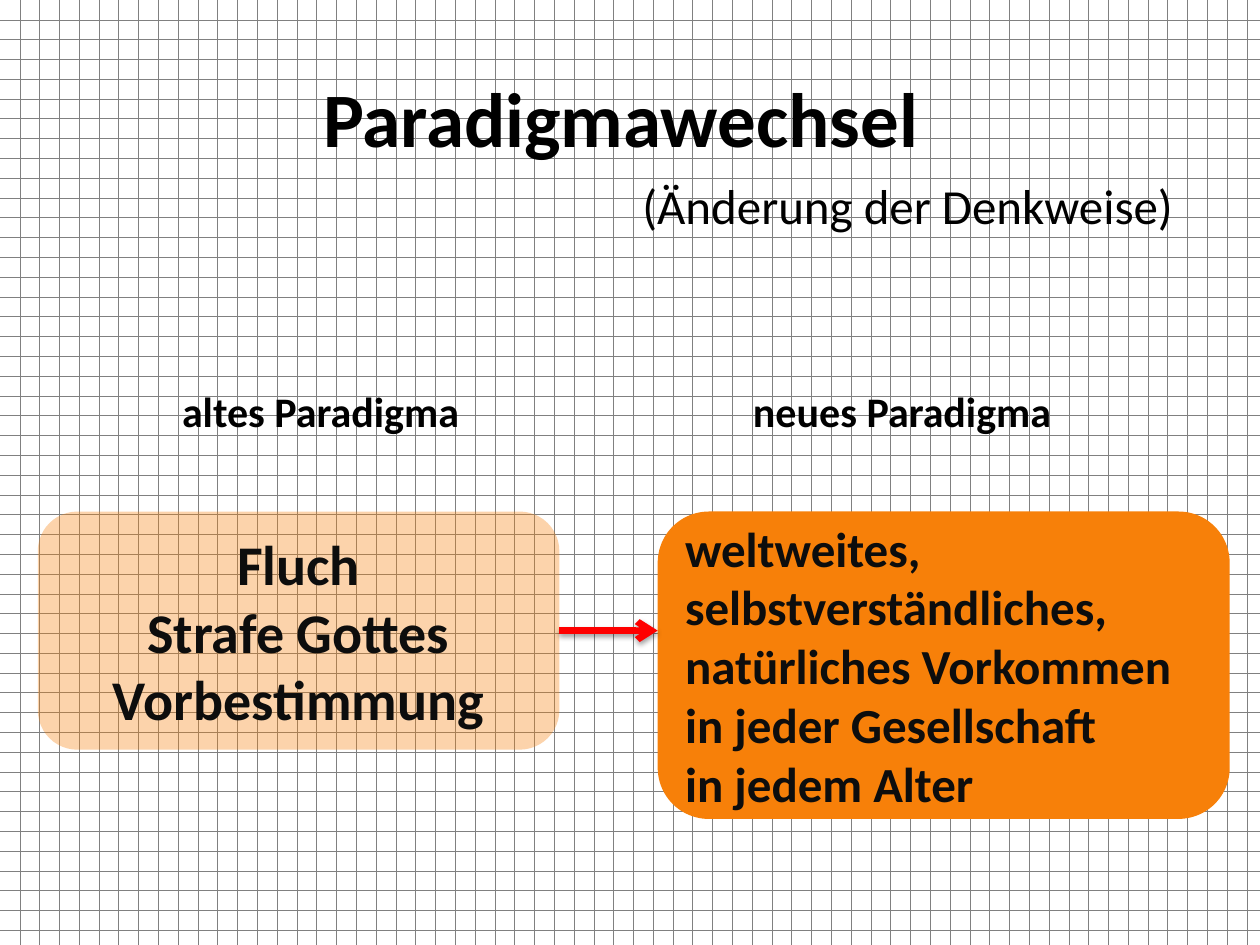
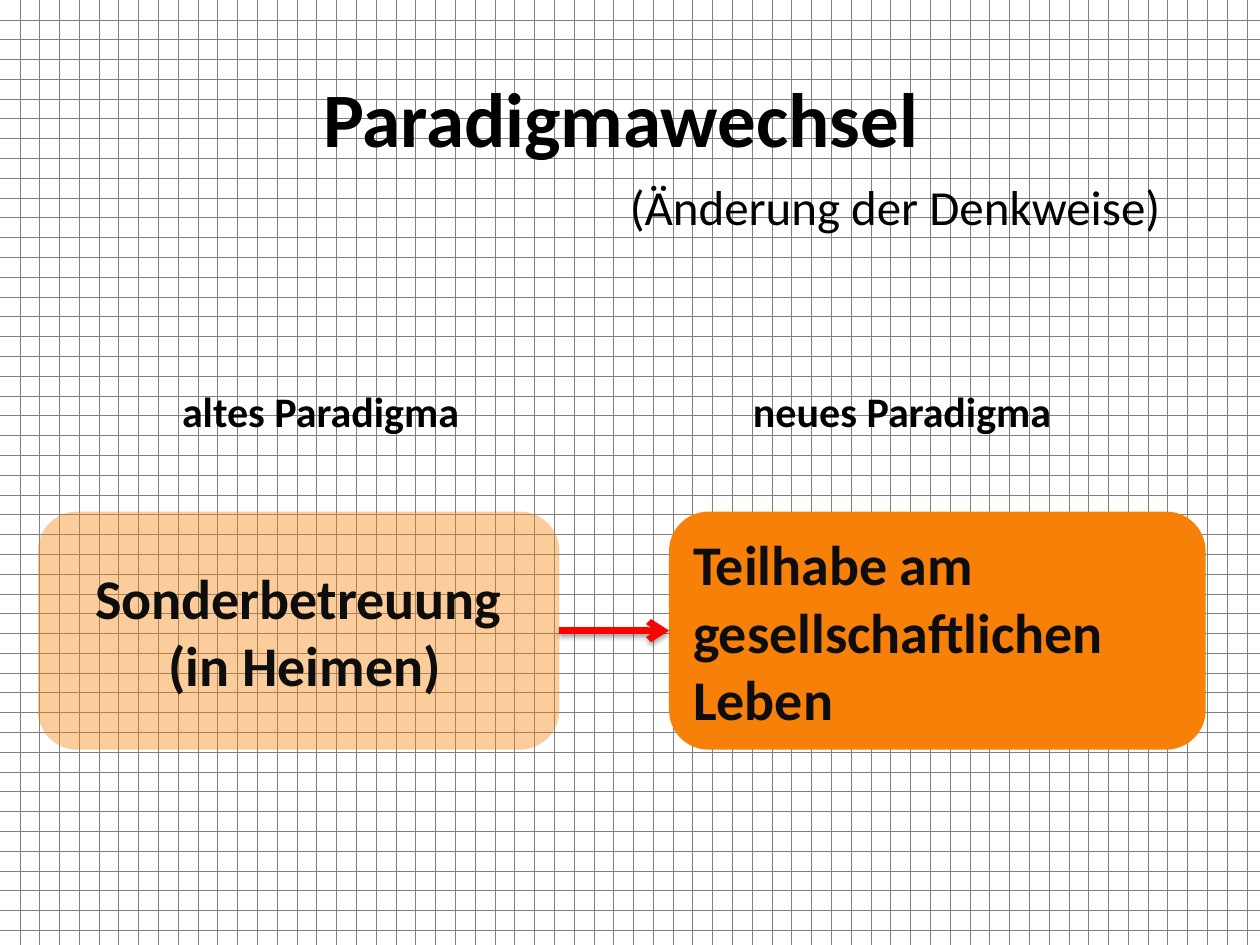
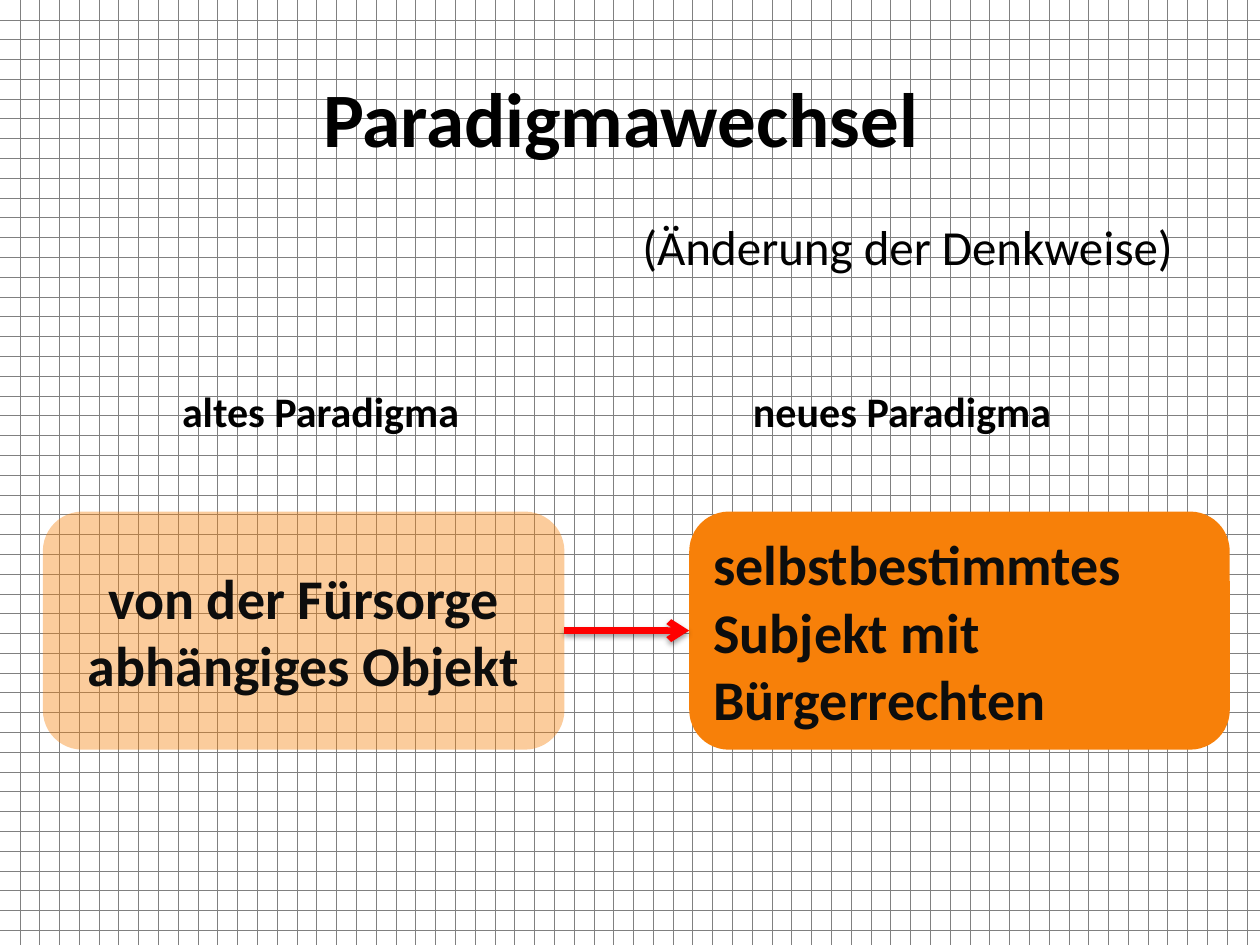
from dataclasses import dataclass

from lxml import etree
from pptx import Presentation
from pptx import util as u
from pptx.dml import color
from pptx.enum import dml, shapes, text
from pptx.oxml import ns

PX = 9144
FONT = "Calibri"
BLACK = "000000"
INK = "0D0D0D"
ORANGE = "F78009"
RED = "FF0000"
WHITE = "FFFFFF"
GRID_GREY = "808080"
BOX_TOP = 406
BOX_HEIGHT = 189

CENTER = text.PP_ALIGN.CENTER
LEFT = text.PP_ALIGN.LEFT
MIDDLE = text.MSO_ANCHOR.MIDDLE


@dataclass(frozen=True)
class Label:
    wording: str
    left: int
    top: int
    width: int
    height: int
    size: int
    bold: bool = True
    align: text.PP_ALIGN = CENTER
    anchor: text.MSO_ANCHOR = MIDDLE
    right_inset: int = 10


@dataclass(frozen=True)
class Paradigm:
    wording: str
    left: int
    width: int
    height: int = BOX_HEIGHT
    size: int = 32
    align: text.PP_ALIGN = CENTER
    opacity: int = 100


@dataclass(frozen=True)
class Change:
    old: Paradigm
    new: Paradigm
    subtitle_left: int
    subtitle_top: int


HEADINGS = [
    Label("Paradigmawechsel", 50, 30, 900, 125, 44, right_inset=24),
    Label("altes Paradigma", 41, 281, 442, 70, 24,
          anchor=text.MSO_ANCHOR.BOTTOM, right_inset=25),
    Label("neues Paradigma", 499, 281, 442, 70, 24,
          anchor=text.MSO_ANCHOR.BOTTOM, right_inset=18),
]

CHANGES = [
    Change(
        Paradigm("Fluch\nStrafe Gottes\nVorbestimmung", 30, 414, opacity=34),
        Paradigm("weltweites, selbstverständliches, natürliches Vorkommen "
                 "in jeder Gesellschaft\nin jedem Alter",
                 522, 454, height=244, size=28, align=LEFT),
        500, 134),
    Change(
        Paradigm("Sonderbetreuung\n (in Heimen)", 30, 414, opacity=40),
        Paradigm("Teilhabe am gesellschaftlichen Leben", 531, 426, align=LEFT),
        490, 135),
    Change(
        Paradigm("von der Fürsorge abhängiges Objekt", 34, 414, opacity=40),
        Paradigm("selbstbestimmtes\nSubjekt mit Bürgerrechten", 547, 429, align=LEFT),
        500, 167),
]


def px(length: int) -> u.Emu:
    return u.Emu(length * PX)


def rgb(value: str) -> color.RGBColor:
    return color.RGBColor.from_string(value)


def add_xml(parent, tag: str, **attributes: str):
    return etree.SubElement(parent, ns.qn(tag), attributes)


def write(frame, wording: str, size: int, ink: str, bold: bool,
          align: text.PP_ALIGN, anchor: text.MSO_ANCHOR) -> None:
    frame.text = wording
    frame.word_wrap = True
    frame.vertical_anchor = anchor
    for paragraph in frame.paragraphs:
        paragraph.alignment = align
        for run in paragraph.runs:
            run.font.name = FONT
            run.font.size = u.Pt(size)
            run.font.bold = bold
            run.font.color.rgb = rgb(ink)


def draw_grid(slide) -> None:
    fill = slide.background.fill
    fill.patterned()
    fill.pattern = dml.MSO_PATTERN.DOTTED_GRID
    fill.fore_color.rgb = rgb(GRID_GREY)
    fill.back_color.rgb = rgb(WHITE)


def draw_label(slide, label: Label) -> None:
    frame = slide.shapes.add_textbox(
        px(label.left), px(label.top), px(label.width), px(label.height)).text_frame
    write(frame, label.wording, label.size, BLACK, label.bold, label.align, label.anchor)
    frame.margin_right = px(label.right_inset)


def draw_paradigm(slide, paradigm: Paradigm):
    box = slide.shapes.add_shape(
        shapes.MSO_SHAPE.ROUNDED_RECTANGLE, px(paradigm.left), px(BOX_TOP),
        px(paradigm.width), px(paradigm.height))
    box.shadow.inherit = False
    box.line.fill.background()
    box.fill.solid()
    box.fill.fore_color.rgb = rgb(ORANGE)
    if paradigm.opacity < 100:
        tint = box.element.spPr.find(".//" + ns.qn("a:srgbClr"))
        add_xml(tint, "a:alpha", val=str(paradigm.opacity * 1000))
    write(box.text_frame, paradigm.wording, paradigm.size, INK, True,
          paradigm.align, MIDDLE)
    return box


def draw_arrow(slide, old, new) -> None:
    middle = old.top + old.height // 2
    arrow = slide.shapes.add_connector(
        shapes.MSO_CONNECTOR.STRAIGHT, old.left + old.width, middle, new.left, middle)
    arrow.begin_connect(old, 3)
    if new.height == old.height:
        arrow.end_connect(new, 1)
    arrow.line.color.rgb = rgb(RED)
    arrow.line.width = u.Pt(3.75)
    properties = arrow.element.spPr
    add_xml(properties.find(ns.qn("a:ln")), "a:tailEnd", type="arrow")
    effects = add_xml(properties, "a:effectLst")
    shadow = add_xml(effects, "a:outerShdw", blurRad="40000", dist="20000",
                     dir="5400000", rotWithShape="0")
    add_xml(add_xml(shadow, "a:srgbClr", val=BLACK), "a:alpha", val="38000")


def draw_change(slide, change: Change) -> None:
    draw_grid(slide)
    for heading in HEADINGS:
        draw_label(slide, heading)
    old = draw_paradigm(slide, change.old)
    new = draw_paradigm(slide, change.new)
    draw_arrow(slide, old, new)
    draw_label(slide, Label(
        "(Änderung der Denkweise)", change.subtitle_left, change.subtitle_top,
        476, 57, 28, bold=False, align=LEFT, anchor=text.MSO_ANCHOR.TOP))


def main() -> None:
    deck = Presentation()
    deck.slide_width, deck.slide_height = px(1000), px(750)
    blank = deck.slide_layouts[6]
    for change in CHANGES:
        draw_change(deck.slides.add_slide(blank), change)
    deck.save("out.pptx")


if __name__ == "__main__":
    main()
